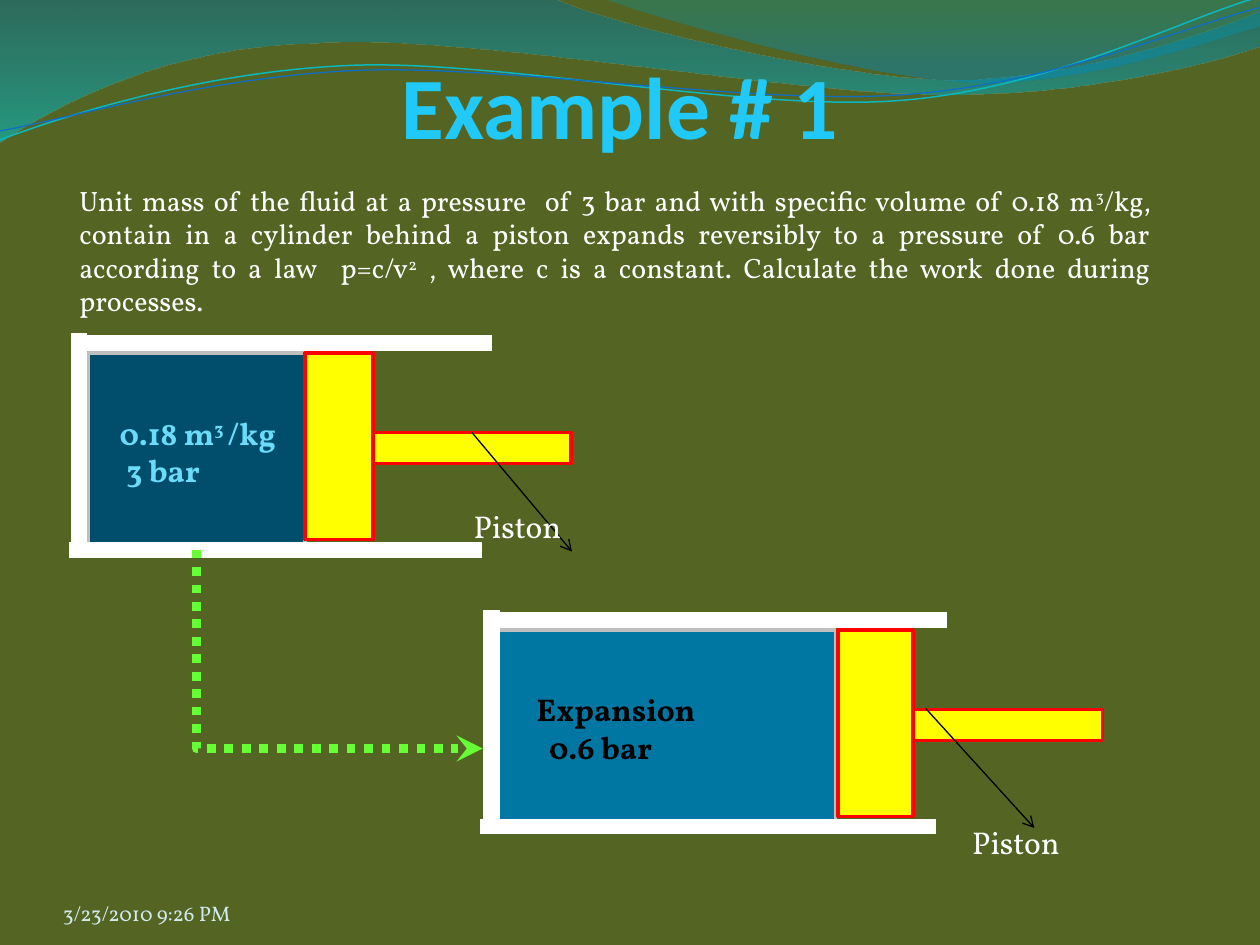
from pptx import Presentation
from pptx.dml.color import RGBColor
from pptx.enum.dml import MSO_LINE
from pptx.enum.shapes import MSO_CONNECTOR, MSO_SHAPE
from pptx.enum.text import MSO_ANCHOR, PP_ALIGN
from pptx.oxml.ns import qn
from pptx.util import Cm, Pt
from lxml.etree import SubElement

BACKGROUND, WHITE, BLACK = "546422", "FFFFFF", "000000"
YELLOW, RED, GREY, GREEN = "FFFF00", "FF0000", "BFBFBF", "66FF33"

BANDS = [
    ([(0, 0), (11.18, -0.03), (12.09, 0.43, 16.87, 1.6, 19.25, 1.6),
      (21.67, 1.6, 24.33, 0.66, 25.4, 0.23), (25.43, 0.91),
      (24.97, 1.12, 22.1, 1.93, 18.95, 1.9), (15.8, 1.9, 9.7, 0.71, 6.53, 0.86),
      (3.28, 0.91, 1.17, 2.11, -0.03, 2.87)],
     [(0, "0074A1", 45), (1, "00C6CF", 55)]),
    ([(12.17, -0.03), (12.93, 0.28, 17.32, 1.57, 19.53, 1.65),
      (21.74, 1.75, 24.41, 0.81, 25.4, 0.53), (25.4, 0)],
     [(0, "00A1A9", 30), (0.8, "008BBF", 45)]),
]
WAVES = [
    ([(0, 2.82), (1.22, 2.36, 4.01, 1.45, 7.04, 1.32),
      (10.03, 1.19, 15.06, 2.26, 18.11, 2.03),
      (21.16, 1.8, 23.83, 0.38, 25.35, -0.05)], "0AB8BF", 0.85),
    ([(0, 2.64), (1.19, 2.44, 4.17, 1.55, 7.19, 1.42),
      (10.24, 1.3, 15.16, 2.13, 18.21, 1.91),
      (21.23, 1.7, 23.9, 0.53, 25.4, 0.15)], "0F6FC6", 0.75),
]
PROBLEM = (
    "Unit mass of the fluid at a pressure  of 3 bar and with specific volume of "
    "0.18 m^3^/kg, contain in a cylinder behind a piston expands reversibly to a "
    "pressure of 0.6 bar according to a law  p=c/v^2^ , where c is a constant. "
    "Calculate the work done during processes.")
CYLINDERS = [
    {"top": 7.12, "gas": (1.78, 4.37), "head": (6.15, 1.37), "rod": (7.52, 3.99),
     "fill": "004E6C", "color": "6BDBFA", "lines": ["0.18 m^3 ^/kg", "3 bar"],
     "indents": [0.38, 0.52], "pointer": (9.52, 8.72, 11.53, 11.12), "joined": True,
     "label": (9.3, 10.09, 2.62, 0.66), "roof": (1.57, 9.92), "floor": (1.4, 9.72),
     "side": 1.59, "side_width": 9},
    {"top": 12.7, "gas": (9.93, 6.91), "head": (16.89, 1.52), "rod": (18.42, 3.81),
     "fill": "0076A3", "color": BLACK, "lines": ["Expansion", "0.6 bar"],
     "indents": [0.64, 0.89], "pointer": (18.66, 14.28, 20.85, 16.69), "joined": False,
     "label": (19.35, 16.46, 2.87, 0.66), "roof": (9.91, 19.1), "floor": (9.68, 18.87),
     "side": 9.91, "side_width": 10},
]
GAS_HEIGHT, HEAD_HEIGHT, ROD_DROP, ROD_HEIGHT = 3.96, 3.76, 1.6, 0.63
ROOF_RISE, SIDE_RISE = 0.2, 0.41


def rgb(value):
    return RGBColor.from_string(value)


def write(shape, lines, size=18, font="Vollkorn", color=WHITE, bold=False,
          align=PP_ALIGN.LEFT, anchor=MSO_ANCHOR.TOP, indents=None, insets=None):
    frame = shape.text_frame
    frame.word_wrap = True
    frame.vertical_anchor = anchor
    if insets:
        (frame.margin_left, frame.margin_top,
         frame.margin_right, frame.margin_bottom) = map(Cm, insets)
    for index, line in enumerate(lines):
        para = frame.paragraphs[0] if index == 0 else frame.add_paragraph()
        para.alignment = align
        if indents:
            para._p.get_or_add_pPr().set("marL", str(Cm(indents[index])))
        for order, text in enumerate(line.split("^")):
            span = para.add_run()
            span.text = text
            span.font.size, span.font.name, span.font.bold = Pt(size), font, bold
            span.font.color.rgb = rgb(color)
            if order % 2:
                span.font._element.set("baseline", "30000")


def add_text(page, place, lines, **style):
    write(page.shapes.add_textbox(*map(Cm, place)), lines, **style)


def add_box(page, place, fill, outline):
    box = page.shapes.add_shape(MSO_SHAPE.RECTANGLE, *map(Cm, place))
    box.shadow.inherit = False
    box.fill.solid()
    box.fill.fore_color.rgb = rgb(fill)
    box.line.color.rgb = rgb(outline)
    box.line.width = Pt(2)
    return box


def add_line(page, ends, color, width, kind=MSO_CONNECTOR.STRAIGHT, arrow=None, dash=None):
    line = page.shapes.add_connector(kind, *map(Cm, ends))
    line.line.color.rgb = rgb(color)
    line.line.width = Pt(width)
    if dash:
        line.line.dash_style = dash
    if arrow:
        SubElement(line.line._get_or_add_ln(), qn("a:tailEnd"), type=arrow)
    SubElement(line._element.spPr, qn("a:effectLst"))
    return line


def add_outline(page, segments, close):
    corners = [tuple(map(Cm, segment[-2:])) for segment in segments]
    builder = page.shapes.build_freeform(*corners[0])
    builder.add_line_segments(corners[1:], close=close)
    shape = builder.convert_to_shape()
    shape.shadow.inherit = False
    edges = list(shape._element.spPr.iter(qn("a:lnTo")))
    for edge, segment in zip(edges, segments[1:]):
        if len(segment) == 6:
            bend_edge(edge, segment, shape.left, shape.top)
    return shape


def bend_edge(edge, segment, left, top):
    curve = SubElement(edge.getparent(), qn("a:cubicBezTo"))
    for x, y in zip(segment[::2], segment[1::2]):
        SubElement(curve, qn("a:pt"), x=str(Cm(x) - left), y=str(Cm(y) - top))
    edge.getparent().replace(edge, curve)


def add_band(page, segments, stops):
    band = add_outline(page, segments, True)
    band.line.fill.background()
    band.fill.gradient()
    band.fill.gradient_angle = 270
    for stop, (position, color, opacity) in zip(band.fill.gradient_stops, stops):
        stop.position = position
        stop.color.rgb = rgb(color)
        SubElement(stop._gs.find(qn("a:srgbClr")), qn("a:alpha"), val=str(opacity * 1000))


def add_wave(page, segments, color, width):
    wave = add_outline(page, segments, False)
    wave.fill.background()
    wave.line.color.rgb = rgb(color)
    wave.line.width = Pt(width)


def add_cylinder(page, item):
    top = item["top"]
    bottom = top + GAS_HEIGHT
    gas_left, gas_width = item["gas"]
    head_left, head_width = item["head"]
    rod_left, rod_width = item["rod"]
    gas = add_box(page, (gas_left, top, gas_width, GAS_HEIGHT), item["fill"], GREY)
    write(gas, item["lines"], color=item["color"], bold=True,
          anchor=MSO_ANCHOR.MIDDLE, indents=item["indents"])
    add_box(page, (head_left, top, head_width, HEAD_HEIGHT), YELLOW, RED)
    rod = add_box(page, (rod_left, top + ROD_DROP, rod_width, ROD_HEIGHT), YELLOW, RED)
    pointer = add_line(page, item["pointer"], BLACK, 0.75, arrow="arrow")
    if item["joined"]:
        pointer.begin_connect(rod, 0)
    add_text(page, item["label"], ["Piston"])
    for (left, right), height in ((item["roof"], top - ROOF_RISE), (item["floor"], bottom)):
        add_line(page, (left, height, right, height), WHITE, 9)
    add_line(page, (item["side"], top - SIDE_RISE, item["side"], bottom),
             WHITE, item["side_width"])


def add_process_arrow(page):
    arrow = add_line(page, (8.85, 10.2, 4.84, 15.97), GREEN, 5, kind=MSO_CONNECTOR.ELBOW,
                     arrow="stealth", dash=MSO_LINE.ROUND_DOT)
    properties = arrow._element.spPr
    properties.find(qn("a:prstGeom")).set("prst", "bentConnector2")
    properties.find(qn("a:xfrm")).set("rot", str(270 * 60000))


def main():
    deck = Presentation()
    deck.slide_width, deck.slide_height = Cm(25.4), Cm(19.05)
    page = deck.slides.add_slide(deck.slide_layouts[6])
    page.background.fill.solid()
    page.background.fill.fore_color.rgb = rgb(BACKGROUND)
    for band in BANDS:
        add_band(page, *band)
    for wave in WAVES:
        add_wave(page, *wave)
    add_text(page, (1.07, 0, 22.86, 3.17), ["Example # 1"], size=50, font="Calibri",
             color="20C9F8", bold=True, align=PP_ALIGN.CENTER,
             anchor=MSO_ANCHOR.BOTTOM, insets=(0, 0.13, 0, 0))
    add_text(page, (0.59, 3.57, 22.86, 2.95), [PROBLEM], size=16,
             align=PP_ALIGN.JUSTIFY, indents=[0.76])
    add_text(page, (1.27, 17.65, 5.92, 1.02), ["3/23/2010 9:26 PM"], size=12,
             color="D1EAEE", anchor=MSO_ANCHOR.BOTTOM, insets=(0, 0, 0, 0))
    for item in CYLINDERS:
        add_cylinder(page, item)
    add_process_arrow(page)
    deck.save("out.pptx")


if __name__ == "__main__":
    main()
